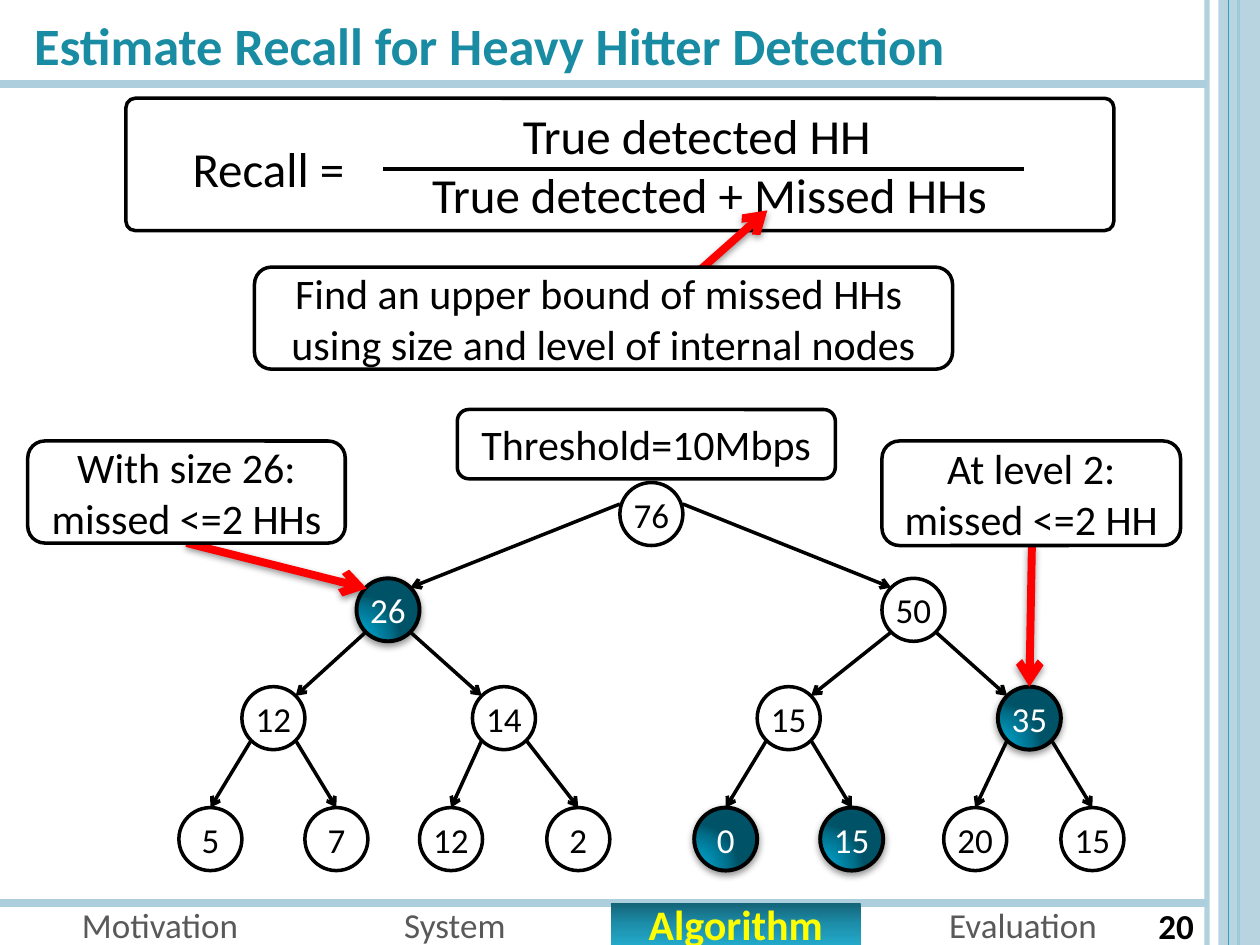
from math import sqrt

from lxml.etree import SubElement
from pptx import Presentation
from pptx.dml.color import RGBColor
from pptx.enum.shapes import MSO_CONNECTOR, MSO_SHAPE
from pptx.enum.text import MSO_ANCHOR, PP_ALIGN
from pptx.oxml import parse_xml
from pptx.oxml.ns import nsdecls, qn
from pptx.util import Inches, Pt

WIDTH, HEIGHT = 10, 7.5
FONT = "Calibri"
BLACK = RGBColor(0x00, 0x00, 0x00)
WHITE = RGBColor(0xFF, 0xFF, 0xFF)
RED = RGBColor(0xFF, 0x00, 0x00)
YELLOW = RGBColor(0xFF, 0xFF, 0x00)
GREY = RGBColor(0x59, 0x59, 0x59)
TEAL = RGBColor(0x19, 0x8C, 0xA3)
RULE_TEAL = RGBColor(0x2D, 0xA2, 0xBF)
PALE_TEAL = RGBColor(0xAD, 0xCE, 0xDC)

TAB_STOPS = ((0, "146478"), (50, "1D8EAA"), (100, "22A9CA"))
TAB_SHADE = '<a:lin ang="5400000" scaled="0"/>'
NODE_STOPS = ((0, "009BC1"), (30, "0095BA"), (75, "00708C"), (100, "005367"))
NODE_SHADE = ('<a:path path="circle"><a:fillToRect l="5000" t="100000" '
              'r="120000" b="10000"/></a:path>')

# Tree: one row of nodes per level, as (label, centre x, highlighted)
RADIUS = 0.25
DIAGONAL = RADIUS / sqrt(2)
LEVEL_Y = (4.08, 4.84, 5.7, 6.66)
TREE = (
    (("76", 5.17, False),),
    (("26", 3.08, True), ("50", 7.25, False)),
    (("12", 2.17, False), ("14", 4.0, False), ("15", 6.26, False), ("35", 8.17, True)),
    (("5", 1.67, False), ("7", 2.67, False), ("12", 3.58, False), ("2", 4.59, False),
     ("0", 5.76, True), ("15", 6.76, True), ("20", 7.74, False), ("15", 8.67, False)),
)


def make_effects(shadow):
    """Return an effect list that is empty or holds a soft drop shadow."""
    inner = ('<a:outerShdw blurRad="50800" dist="20320" dir="5400000" rotWithShape="0">'
             '<a:srgbClr val="000000"><a:alpha val="42000"/></a:srgbClr></a:outerShdw>')
    return parse_xml(f'<a:effectLst {nsdecls("a")}>{inner if shadow else ""}</a:effectLst>')


def set_opacity(properties, percent):
    color = next(properties.iter(qn("a:srgbClr")))
    SubElement(color, qn("a:alpha")).set("val", str(percent * 1000))


def set_gradient(shape, stops, shade):
    shape.fill.solid()
    solid = shape._element.spPr.find(qn("a:solidFill"))
    marks = "".join(f'<a:gs pos="{place * 1000}"><a:srgbClr val="{color}"/></a:gs>'
                    for place, color in stops)
    gradient = parse_xml(f'<a:gradFill {nsdecls("a")} rotWithShape="1">'
                         f'<a:gsLst>{marks}</a:gsLst>{shade}</a:gradFill>')
    solid.getparent().replace(solid, gradient)


def write_text(shape, text, size=24, color=BLACK, bold=False, align=PP_ALIGN.CENTER,
               anchor=MSO_ANCHOR.MIDDLE, inset=None, indents=(), shadow=False):
    frame = shape.text_frame
    frame.word_wrap = True
    frame.vertical_anchor = anchor
    if inset is not None:
        frame.margin_left = frame.margin_right = Inches(inset)
        frame.margin_top = frame.margin_bottom = Inches(inset)
    frame.text = text
    for para in frame.paragraphs:
        para.alignment = align
        for span in para.runs:
            span.font.name, span.font.size, span.font.bold = FONT, Pt(size), bold
            span.font.color.rgb = color
            if shadow:
                fill = span._r.rPr.find(qn("a:solidFill"))
                fill.addnext(make_effects(True))
    for para, indent in zip(frame.paragraphs, indents):
        para._p.get_or_add_pPr().set("marL", str(Inches(indent)))


def add_box(page, kind, left, top, width, height, fill=WHITE, line=BLACK,
            line_width=2, shadow=False):
    box = page.shapes.add_shape(kind, Inches(left), Inches(top), Inches(width), Inches(height))
    box.fill.solid()
    box.fill.fore_color.rgb = fill
    if line is None:
        box.line.fill.background()
    else:
        box.line.color.rgb = line
        box.line.width = Pt(line_width)
    box._element.spPr.append(make_effects(shadow))
    return box


def add_callout(page, text, left, top, width, height, **text_format):
    box = add_box(page, MSO_SHAPE.ROUNDED_RECTANGLE, left, top, width, height)
    write_text(box, text, **text_format)
    return box


def add_label(page, text, left, top, width, height, **text_format):
    box = page.shapes.add_textbox(Inches(left), Inches(top), Inches(width), Inches(height))
    write_text(box, text, **text_format)


def add_line(page, start, end, color=BLACK, width=2, arrow=False, shadow=False):
    line = page.shapes.add_connector(MSO_CONNECTOR.STRAIGHT, *map(Inches, start + end))
    line.line.color.rgb = color
    line.line.width = Pt(width)
    if arrow:
        SubElement(line.line._get_or_add_ln(), qn("a:tailEnd")).set("type", "arrow")
    line._element.spPr.append(make_effects(shadow))
    return line


def add_pointer(page, start, end):
    add_line(page, start, end, color=RED, width=4.5, arrow=True, shadow=True)


def add_frame(page):
    # Right-hand band
    edge = add_line(page, (9.58, 0), (9.58, HEIGHT), PALE_TEAL, 3)
    set_opacity(edge._element.spPr, 93)
    add_line(page, (9.83, 0), (9.83, HEIGHT), RULE_TEAL, 1.5)
    band = add_box(page, MSO_SHAPE.RECTANGLE, 9.67, 0, 0.33, HEIGHT, PALE_TEAL, None)
    set_opacity(band._element.spPr, 87)
    add_line(page, (9.75, 0), (9.75, HEIGHT), RULE_TEAL, 0.75)
    # Header and footer rules
    for y in (0.67, 7.17):
        add_line(page, (0, y), (9.58, y), PALE_TEAL, 4.5)
    # Section names, with the current one highlighted
    for name, left in (("Motivation", 0.32), ("System", 2.66), ("Evaluation", 7.17)):
        add_label(page, name, left, 7.17, 1.9, 0.33, size=20, color=GREY, shadow=True)
    tab = add_box(page, MSO_SHAPE.RECTANGLE, 4.85, 7.17, 1.98, 0.33, line=None)
    set_gradient(tab, TAB_STOPS, TAB_SHADE)
    write_text(tab, "Algorithm", color=YELLOW, bold=True)
    add_label(page, "20", 9, 7.06, 0.67, 0.57, size=20, bold=True)


def add_title(page, text):
    title = page.shapes.title
    title.left, title.top = Inches(0.17), Inches(0.05)
    title.width, title.height = Inches(9.42), Inches(0.78)
    write_text(title, text, size=30, color=TEAL, bold=True,
               align=PP_ALIGN.LEFT, anchor=MSO_ANCHOR.TOP)


def add_node(page, label, x, y, highlighted):
    node = add_box(page, MSO_SHAPE.OVAL, x - RADIUS, y - RADIUS, 2 * RADIUS, 2 * RADIUS,
                   line_width=2.25 if highlighted else 2, shadow=highlighted)
    if highlighted:
        set_gradient(node, NODE_STOPS, NODE_SHADE)
    write_text(node, label, size=20, color=WHITE if highlighted else BLACK, inset=0)


def add_branch(page, level, parent_x, child_x):
    side = 1 if child_x > parent_x else -1
    top, bottom = LEVEL_Y[level], LEVEL_Y[level + 1]
    if level == 0:
        start = (parent_x + side * RADIUS, top - 0.08)
    else:
        start = (parent_x + side * DIAGONAL, top + DIAGONAL)
    if level + 2 == len(LEVEL_Y):
        end = (child_x, bottom - RADIUS)
    else:
        end = (child_x - side * DIAGONAL, bottom - DIAGONAL)
    add_line(page, start, end, arrow=True)


def add_tree(page):
    for y, row in zip(LEVEL_Y, TREE):
        for label, x, highlighted in row:
            add_node(page, label, x, y, highlighted)
    for level, row in enumerate(TREE[1:]):
        for index, (_, x, _) in enumerate(row):
            add_branch(page, level, TREE[level][index // 2][1], x)


def add_formula(page):
    box = add_callout(page, "True detected HH\nTrue detected + Missed HHs",
                      1, 0.78, 7.84, 1.05, size=28, indents=(1.22, 1.42))
    box.adjustments[0] = 0.07
    add_label(page, "Recall =", 1.43, 1.05, 2.26, 0.57, size=28,
              align=PP_ALIGN.LEFT, anchor=MSO_ANCHOR.TOP)
    add_line(page, (3.04, 1.34), (8.13, 1.34))


def main():
    deck = Presentation()
    deck.slide_width, deck.slide_height = Inches(WIDTH), Inches(HEIGHT)
    page = deck.slides.add_slide(deck.slide_layouts[5])
    add_frame(page)
    add_title(page, "Estimate Recall for Heavy Hitter Detection")
    add_tree(page)
    # Notes on the tree
    add_pointer(page, (1.48, 4.31), (2.91, 4.67))
    add_callout(page, "With size 26: missed <=2 HHs", 0.22, 3.5, 2.52, 0.81)
    add_pointer(page, (8.19, 4.33), (8.17, 5.45))
    add_callout(page, "At level 2: missed <=2 HH", 7, 3.5, 2.37, 0.83)
    add_callout(page, "Threshold=10Mbps", 3.63, 3.25, 3, 0.55)
    # Recall formula and its note
    add_formula(page)
    add_pointer(page, (5.3, 2.37), (6.09, 1.67))
    add_callout(page, "Find an upper bound of missed HHs \nusing size and level of internal nodes",
                2.02, 2.12, 5.54, 0.81)
    deck.save("out.pptx")


if __name__ == "__main__":
    main()
